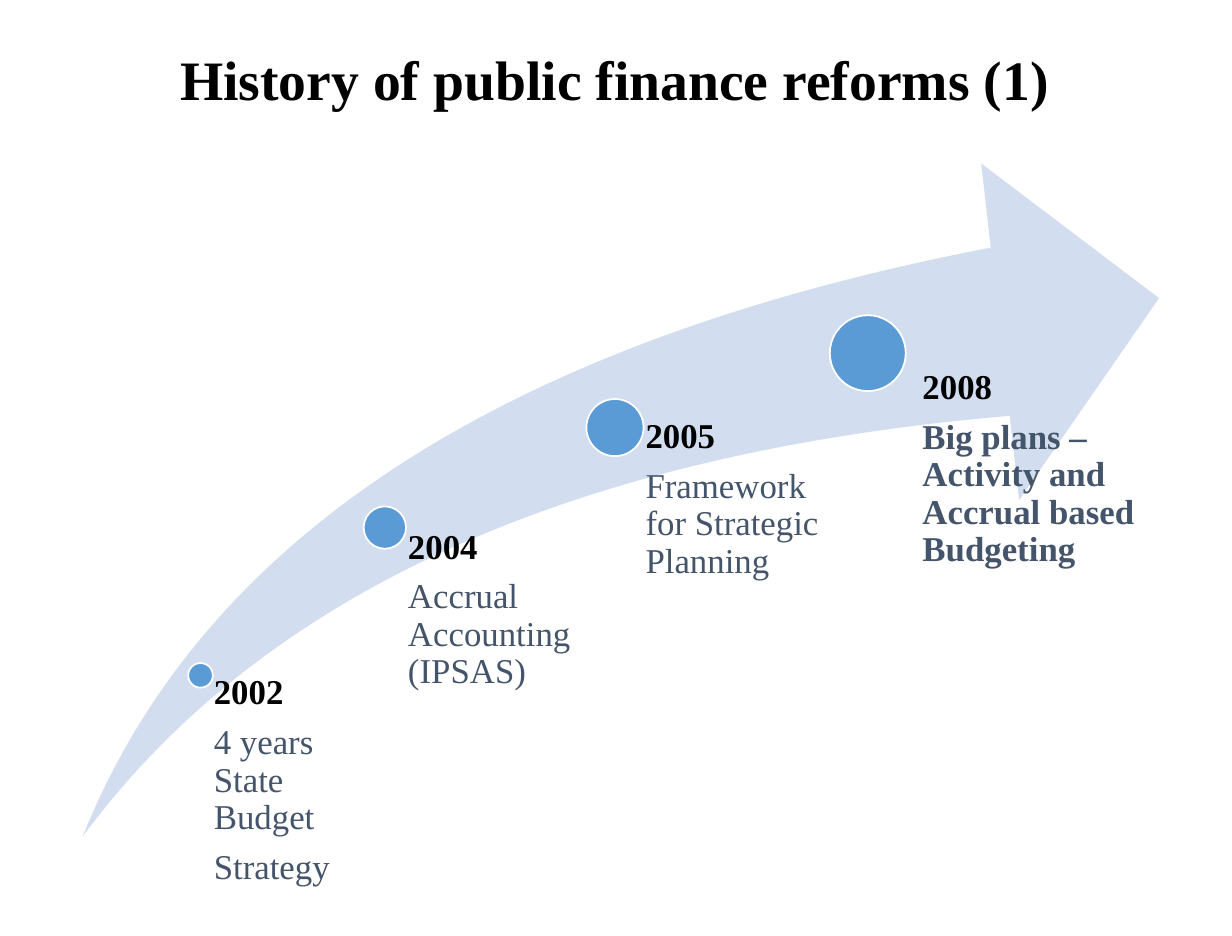
from pptx import Presentation
from pptx.dml.color import RGBColor
from pptx.enum.shapes import MSO_SHAPE
from pptx.enum.text import MSO_ANCHOR, PP_ALIGN
from pptx.util import Pt

PX = 7200
FONT = "Times New Roman"
BLACK = RGBColor(0x00, 0x00, 0x00)
SLATE = RGBColor(0x44, 0x54, 0x6A)
WHITE = RGBColor(0xFF, 0xFF, 0xFF)
BLUE = RGBColor(0x5B, 0x9B, 0xD5)
PALE_BLUE = RGBColor(0xD2, 0xDE, 0xEF)
SWOOSH, OVAL = MSO_SHAPE.SWOOSH_ARROW, MSO_SHAPE.OVAL
TOP, LEFT, CENTER = MSO_ANCHOR.TOP, PP_ALIGN.LEFT, PP_ALIGN.CENTER

# Each milestone: dot (left, top, diameter), text box, left inset, year, reforms, bold reforms
MILESTONES = [
    ((191, 673, 25), (204, 685, 187, 163), 13, "2002",
     ["4 years State Budget", "Strategy"], False),
    ((369, 514, 43), (391, 537, 230, 312), 23, "2004",
     ["Accrual Accounting (IPSAS)"], False),
    ((595, 405, 58), (625, 425, 230, 422), 30, "2005",
     ["Framework for Strategic Planning"], False),
    ((842, 320, 77), (895, 375, 276, 450), 41, "2008",
     ["Big plans – Activity and Accrual based Budgeting"], True),
]


def emu(*lengths):
    """Turn px lengths into EMU."""
    return [length * PX for length in lengths]


def add_text(slide, box, paragraphs, size=20, align=LEFT, insets=(0, 0, 0, 0),
             line_spacing=0.9, space_after=7):
    """Add a text box from (text, colour, bold) paragraphs."""
    frame = slide.shapes.add_textbox(*emu(*box)).text_frame
    frame.word_wrap = True
    frame.vertical_anchor = TOP
    (frame.margin_left, frame.margin_top,
     frame.margin_right, frame.margin_bottom) = emu(*insets)
    for index, (text, color, bold) in enumerate(paragraphs):
        paragraph = frame.add_paragraph() if index else frame.paragraphs[0]
        paragraph.alignment = align
        paragraph.line_spacing = line_spacing
        paragraph.space_after = Pt(space_after)
        run = paragraph.add_run()
        run.text = text
        run.font.name = FONT
        run.font.size = Pt(size)
        run.font.bold = bold
        run.font.color.rgb = color


def add_filled(slide, preset, box, fill, outline=None):
    """Add a filled preset shape, outlined only if a colour is given."""
    shape = slide.shapes.add_shape(preset, *emu(*box))
    shape.shadow.inherit = False
    shape.fill.solid()
    shape.fill.fore_color.rgb = fill
    if outline is None:
        shape.line.fill.background()
    else:
        shape.line.color.rgb = outline
        shape.line.width = Pt(1)
    return shape


def add_milestone(slide, dot, box, inset, year, reforms, bold):
    """Add a dot on the arrow with its year and reforms."""
    left, top, diameter = dot
    add_filled(slide, OVAL, (left, top, diameter, diameter), BLUE, WHITE)
    paragraphs = [(year, BLACK, True)]
    paragraphs += [(reform, SLATE, bold) for reform in reforms]
    add_text(slide, box, paragraphs, insets=(inset, 0, 0, 0))


def main():
    """Build the slide and save it."""
    deck = Presentation()
    deck.slide_width, deck.slide_height = emu(1250, 950)
    slide = deck.slides.add_slide(deck.slide_layouts[6])
    add_text(slide, (55, 46, 1152, 39),
             [("History of public finance reforms (1)", BLACK, True)],
             size=32, align=CENTER, insets=(0, 8, 14, 0),
             line_spacing=0.88, space_after=0)
    arrow = add_filled(slide, SWOOSH, (84, 166, 1092, 683), PALE_BLUE)
    arrow.adjustments[0] = 0.25
    arrow.adjustments[1] = 0.25
    for milestone in MILESTONES:
        add_milestone(slide, *milestone)
    deck.save("out.pptx")


if __name__ == "__main__":
    main()
